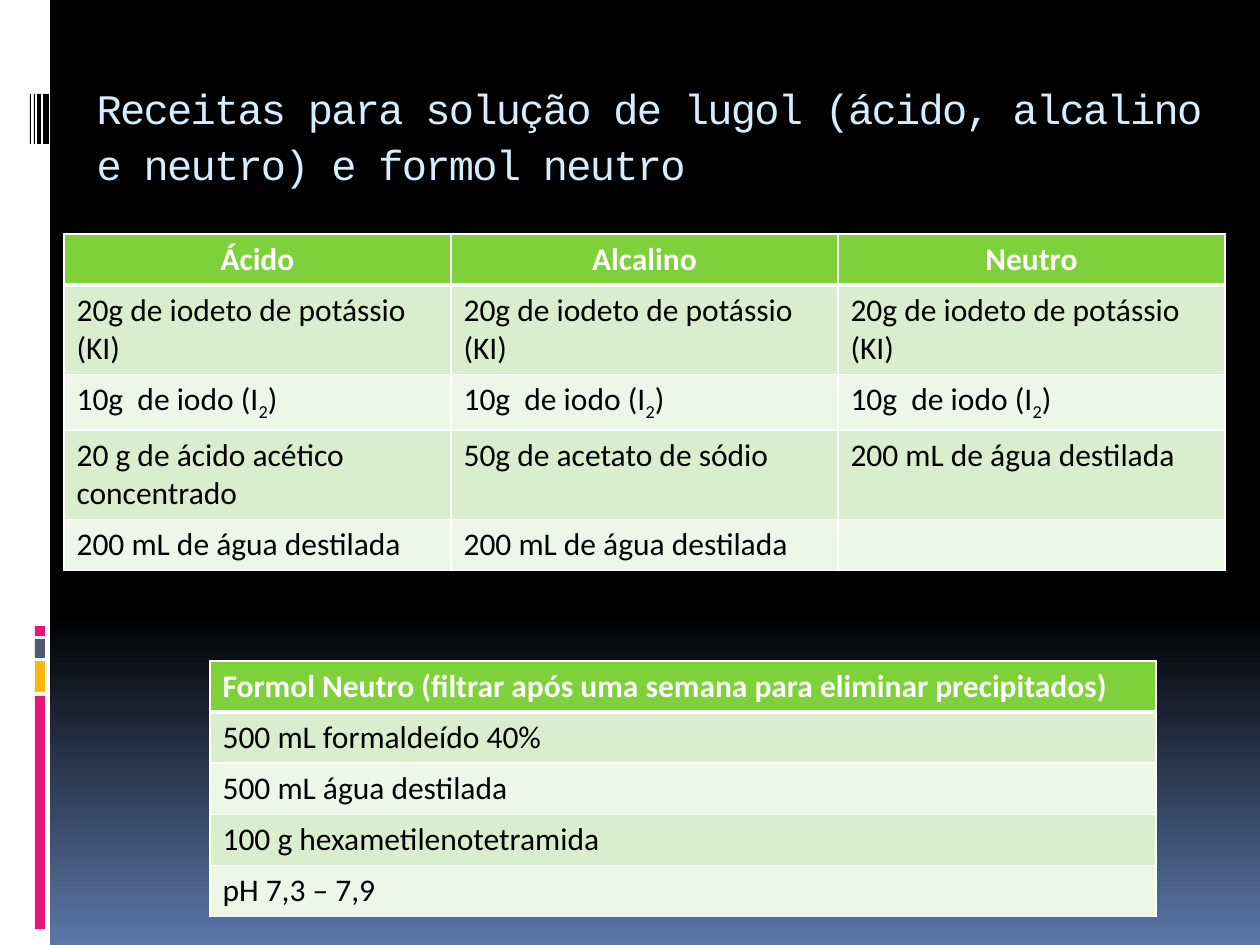
from lxml import etree
from pptx import Presentation
from pptx.dml.color import RGBColor
from pptx.enum.shapes import MSO_SHAPE
from pptx.enum.text import MSO_ANCHOR, PP_ALIGN
from pptx.oxml.ns import qn
from pptx.util import Emu, Pt

RECT = MSO_SHAPE.RECTANGLE
MIDDLE = MSO_ANCHOR.MIDDLE
LEFT, CENTER = PP_ALIGN.LEFT, PP_ALIGN.CENTER
TITLE_ONLY = 5
PX_PER_INCH = 126
ROW_HEIGHT = 51

HEADER_FILL = "7FD13B"
BAND_FILLS = ["ECF7E8", "D8EECE"]
HEADER_FONT = {"name": "Calibri", "size": Pt(18), "bold": True}
BODY_FONT = {**HEADER_FONT, "bold": False}
TITLE_FONT = {"name": "Courier New", "size": Pt(24), "bold": False}

SIDE_BARS = [
    (0, 0, 50, 945, "FFFFFF"),
    (35, 696, 10, 233, "EA157A"),
    (35, 661, 10, 31, "FEB80A"),
    (35, 639, 10, 19, "4E5B6F"),
    (35, 626, 10, 10, "EA157A"),
]
BARCODE = [(43, 6), (37, 4), (34, 1), (30, 1)]

POTASSIUM = "20g de iodeto de potássio (KI)"
IODINE = "10g  de iodo (I_2)"
WATER = "200 mL de água destilada"
LUGOL = [
    ["Ácido", "Alcalino", "Neutro"],
    [POTASSIUM] * 3,
    [IODINE] * 3,
    ["20 g de ácido acético concentrado", "50g de acetato de sódio", WATER],
    [WATER, WATER, ""],
]
FORMOL = [
    ["Formol Neutro (filtrar após uma semana para eliminar precipitados)"],
    ["500 mL formaldeído 40%"],
    ["500 mL água destilada"],
    ["100 g hexametilenotetramida"],
    ["pH 7,3 – 7,9"],
]


def px(n):
    return Emu(round(n * 914400 / PX_PER_INCH))


def rgb(value):
    return RGBColor.from_string(value)


def set_font(font, color, values):
    for name, value in values.items():
        setattr(font, name, value)
    font.color.rgb = rgb(color)


def set_background(s):
    fill = s.background.fill
    fill.gradient()
    fill.gradient_angle = 270
    for stop, position, color in zip(fill.gradient_stops, (0.65, 1), ("000000", "5B77A8")):
        stop.position = position
        stop.color.rgb = rgb(color)


def add_bar(s, x, y, w, h, color):
    sp = s.shapes.add_shape(RECT, px(x), px(y), px(w), px(h))
    sp.shadow.inherit = False
    sp.fill.solid()
    sp.fill.fore_color.rgb = rgb(color)
    sp.line.fill.background()


def set_title(s, text):
    sp = s.shapes.title
    sp.left, sp.top, sp.width, sp.height = px(84), px(70), px(1142), px(126)
    tf = sp.text_frame
    tf.word_wrap = True
    tf.vertical_anchor = MIDDLE
    p = tf.paragraphs[0]
    p.alignment = LEFT
    p.line_spacing = 1.1
    r = p.add_run()
    r.text = text
    set_font(r.font, "D6ECFF", TITLE_FONT)
    r._r.get_or_add_rPr().set("spc", "-100")


def set_borders(cell, widths):
    tcPr = cell._tc.get_or_add_tcPr()
    for side, width in widths.items():
        ln = etree.SubElement(tcPr, qn(f"a:ln{side}"), w=str(Pt(width)))
        fill = etree.SubElement(ln, qn("a:solidFill"))
        etree.SubElement(fill, qn("a:srgbClr"), val="FFFFFF")


def write_cell(cell, text, color, font, align):
    p = cell.text_frame.paragraphs[0]
    p.alignment = align
    before, _, after = text.partition("_")
    for part, baseline in ((before, 0), (after[:1], -25000), (after[1:], 0)):
        if part:
            r = p.add_run()
            r.text = part
            set_font(r.font, color, font)
            if baseline:
                r._r.get_or_add_rPr().set("baseline", str(baseline))


def add_recipe(s, x, y, column_width, rows, header_align):
    columns = len(rows[0])
    frame = s.shapes.add_table(len(rows), columns, px(x), px(y),
                               px(column_width * columns), px(ROW_HEIGHT * len(rows)))
    table = frame.table
    table.horz_banding = False
    for column in table.columns:
        column.width = px(column_width)
    for i, row in enumerate(rows):
        table.rows[i].height = px(ROW_HEIGHT)
        borders = {"L": 1, "R": 1, "T": 3 if i == 1 else 1, "B": 3 if i == 0 else 1}
        for j, text in enumerate(row):
            cell = table.cell(i, j)
            set_borders(cell, borders)
            cell.fill.solid()
            cell.fill.fore_color.rgb = rgb(BAND_FILLS[i % 2] if i else HEADER_FILL)
            if i == 0:
                write_cell(cell, text, "FFFFFF", HEADER_FONT, header_align)
            else:
                write_cell(cell, text, "000000", BODY_FONT, LEFT)


def main():
    prs = Presentation()
    prs.slide_width, prs.slide_height = px(1260), px(945)
    s = prs.slides.add_slide(prs.slide_layouts[TITLE_ONLY])
    set_background(s)
    for bar in SIDE_BARS:
        add_bar(s, *bar)
    for x, w in BARCODE:
        add_bar(s, x, 94, w, 50, "000000")
    set_title(s, "Receitas para solução de lugol (ácido, alcalino e neutro) e formol neutro")
    add_recipe(s, 64, 234, 387, LUGOL, CENTER)
    add_recipe(s, 210, 661, 946, FORMOL, LEFT)
    prs.save("out.pptx")


if __name__ == "__main__":
    main()
